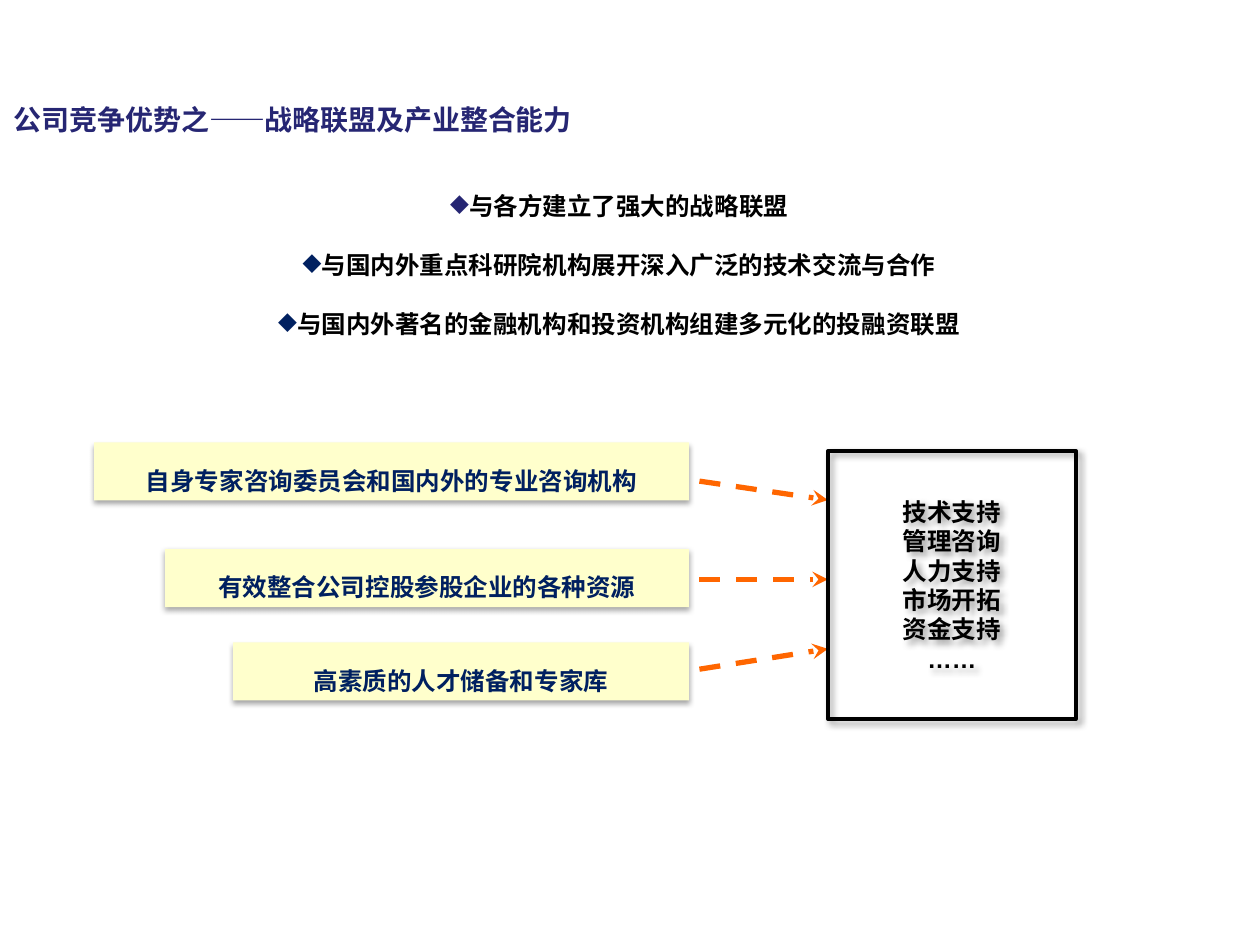
from dataclasses import dataclass

from lxml import etree
from pptx import Presentation
from pptx import util as u
from pptx.dml.color import RGBColor
from pptx.enum import dml, shapes, text
from pptx.oxml import ns

COLORS = {
    "title": "262673",
    "navy": "002060",
    "black": "000000",
    "label": "FFFFCC",
    "arrow": "FF6600",
}
CJK_FONT = "Noto Sans CJK SC"
LABEL_RIGHT = 13.89
LABEL_HEIGHT = 1.17
ARROW_LEFT = 14.1
OUTCOME_LEFT = 16.69


@dataclass
class Resource:
    wording: str
    left: float
    top: float
    arrow_start: float
    arrow_end: float


@dataclass
class Shadow:
    opacity: int
    blur: float
    distance: float
    angle: int


RESOURCES = [
    Resource("自身专家咨询委员会和国内外的专业咨询机构", 1.9, 8.92, 9.7, 10.08),
    Resource("有效整合公司控股参股企业的各种资源", 3.33, 11.07, 11.68, 11.68),
    Resource("高素质的人才储备和专家库", 4.7, 12.95, 13.49, 13.08),
]
ALLIANCES = [
    ("与各方建立了强大的战略联盟", "title"),
    ("与国内外重点科研院机构展开深入广泛的技术交流与合作", "navy"),
    ("与国内外著名的金融机构和投资机构组建多元化的投融资联盟", "navy"),
]
SUPPORTS = ["技术支持", "管理咨询", "人力支持", "市场开拓", "资金支持", "……"]


def rgb(name: str) -> RGBColor:
    return RGBColor.from_string(COLORS[name])


def add_element(parent, tag: str, **attributes):
    values = {key: str(value) for key, value in attributes.items()}
    return etree.SubElement(parent, ns.qn(tag), values)


def add_bullet(paragraph, color: str) -> None:
    properties = paragraph._p.get_or_add_pPr()
    properties.set("marL", str(u.Cm(0.74)))
    properties.set("indent", "0")
    bullet_color = add_element(properties, "a:buClr")
    add_element(bullet_color, "a:srgbClr", val=COLORS[color])
    add_element(properties, "a:buChar", char="◆")


def write_text(paragraph, wording: str, *, color: str = "black", size: int = 14,
               font: str = "Arial", centred: bool = True,
               line: float | None = None, before: float = 0) -> None:
    paragraph.alignment = text.PP_ALIGN.CENTER if centred else text.PP_ALIGN.LEFT
    paragraph.space_before = u.Pt(before)
    if line:
        paragraph.line_spacing = u.Pt(line)
    run = paragraph.add_run()
    run.text = wording
    run.font.size = u.Pt(size)
    run.font.bold = True
    run.font.color.rgb = rgb(color)
    run.font.name = font
    add_element(run.font._element, "a:ea", typeface=CJK_FONT)


def add_paragraph(frame, index: int):
    return frame.add_paragraph() if index else frame.paragraphs[0]


def add_text_box(slide, left: float, top: float, width: float, height: float):
    box = slide.shapes.add_textbox(u.Cm(left), u.Cm(top), u.Cm(width), u.Cm(height))
    box.text_frame.word_wrap = True
    return box.text_frame


def add_box(slide, left: float, top: float, width: float, height: float, shadow: Shadow):
    shape = slide.shapes.add_shape(
        shapes.MSO_SHAPE.RECTANGLE, u.Cm(left), u.Cm(top), u.Cm(width), u.Cm(height))
    shape.shadow.inherit = False
    effects = shape._element.spPr.find(ns.qn("a:effectLst"))
    outer = add_element(effects, "a:outerShdw", blurRad=u.Pt(shadow.blur),
                        dist=u.Pt(shadow.distance), dir=shadow.angle * 60000,
                        algn="tl", rotWithShape=0)
    color = add_element(outer, "a:srgbClr", val=COLORS["black"])
    add_element(color, "a:alpha", val=shadow.opacity * 1000)
    shape.text_frame.word_wrap = True
    shape.text_frame.vertical_anchor = text.MSO_ANCHOR.MIDDLE
    return shape


def add_label(slide, resource: Resource) -> None:
    shape = add_box(slide, resource.left, resource.top, LABEL_RIGHT - resource.left,
                    LABEL_HEIGHT, Shadow(35, 3.1, 1.8, 90))
    shape.fill.solid()
    shape.fill.fore_color.rgb = rgb("label")
    shape.line.fill.background()
    write_text(shape.text_frame.paragraphs[0], resource.wording, color="navy", line=27)


def add_arrow(slide, resource: Resource) -> None:
    connector = slide.shapes.add_connector(
        shapes.MSO_CONNECTOR.STRAIGHT, u.Cm(ARROW_LEFT), u.Cm(resource.arrow_start),
        u.Cm(OUTCOME_LEFT), u.Cm(resource.arrow_end))
    connector.line.color.rgb = rgb("arrow")
    connector.line.width = u.Pt(3)
    connector.line.dash_style = dml.MSO_LINE.DASH
    properties = connector._element.spPr
    add_element(properties.find(ns.qn("a:ln")), "a:tailEnd", type="stealth")
    add_element(properties, "a:effectLst")


def add_outcome(slide) -> None:
    shape = add_box(slide, OUTCOME_LEFT, 9.09, 5, 5.41, Shadow(40, 4, 3, 45))
    shape.fill.background()
    shape.line.color.rgb = rgb("black")
    shape.line.width = u.Pt(2)
    for index, support in enumerate(SUPPORTS):
        write_text(add_paragraph(shape.text_frame, index), support, line=16.8)


def main() -> None:
    presentation = Presentation()
    presentation.slide_width = u.Cm(25.4)
    presentation.slide_height = u.Cm(19.05)
    slide = presentation.slides.add_slide(presentation.slide_layouts[6])

    alliances = add_text_box(slide, 0.71, 3.73, 22.81, 3.25)
    alliances.margin_left = alliances.margin_right = u.Cm(0.13)
    for index, (wording, bullet_color) in enumerate(ALLIANCES):
        paragraph = add_paragraph(alliances, index)
        add_bullet(paragraph, bullet_color)
        write_text(paragraph, wording, font=CJK_FONT, line=16.8,
                   before=16.8 if index else 0)

    title = add_text_box(slide, 0.03, 1.93, 21.84, 0.94)
    title.vertical_anchor = text.MSO_ANCHOR.MIDDLE
    write_text(title.paragraphs[0], "公司竞争优势之——战略联盟及产业整合能力",
               color="title", size=16, font=CJK_FONT, centred=False)

    for resource in RESOURCES:
        add_arrow(slide, resource)
        add_label(slide, resource)
    add_outcome(slide)
    presentation.save("out.pptx")


if __name__ == "__main__":
    main()
